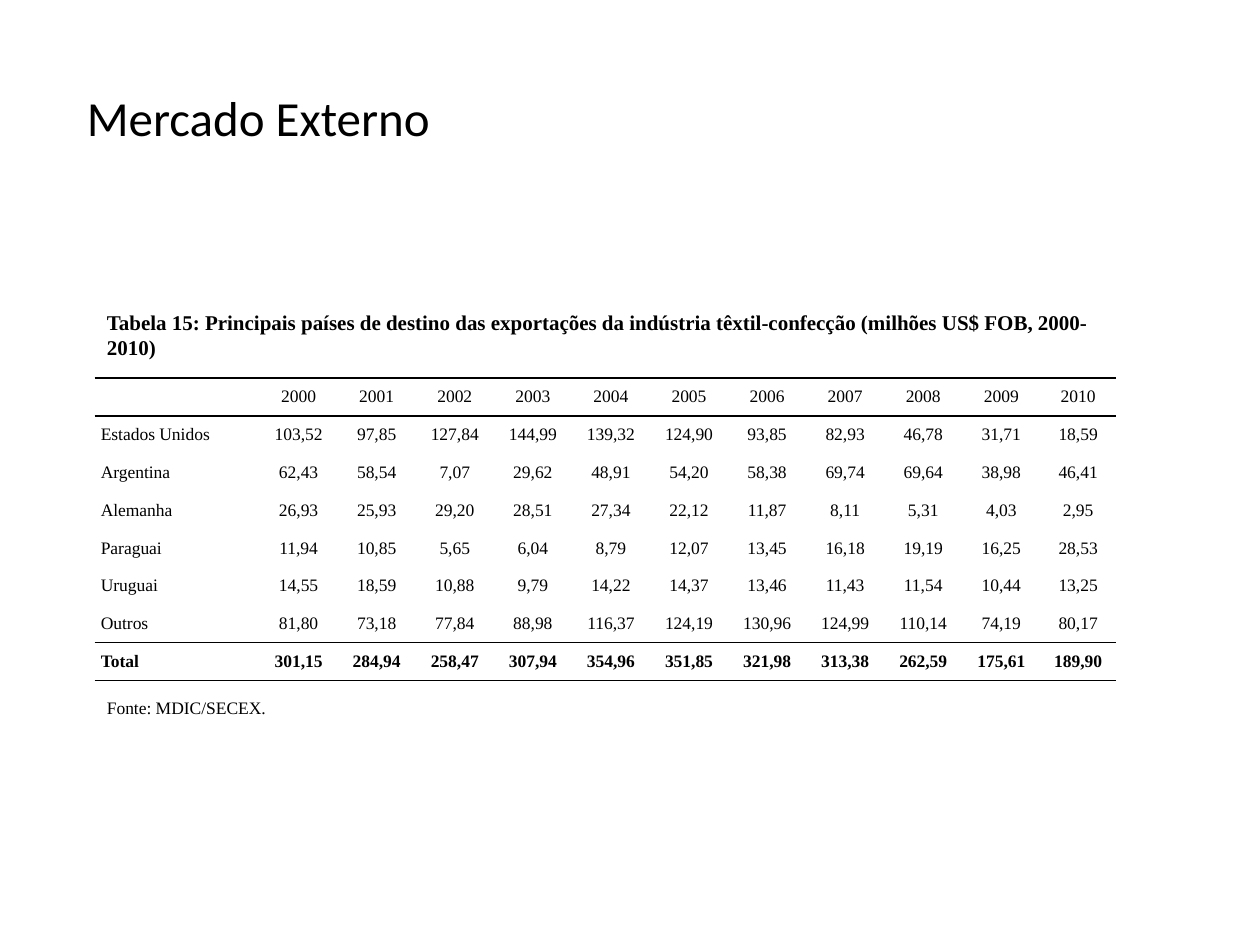
from lxml import etree
from pptx import Presentation
from pptx.dml.color import RGBColor
from pptx.enum.text import MSO_ANCHOR, PP_ALIGN
from pptx.oxml.ns import qn
from pptx.util import Inches, Pt

MIDDLE, TOP = MSO_ANCHOR.MIDDLE, MSO_ANCHOR.TOP
LEFT, CENTER = PP_ALIGN.LEFT, PP_ALIGN.CENTER
BLACK = "000000"
SERIF = "Times New Roman"
RULE_ROWS = {0, 1, 7, 8}
COLUMN_WIDTHS = [1.31] + [0.62] * 10 + [0.6]
ROW_HEIGHT = 0.3
YEARS = [str(year) for year in range(2000, 2011)]
EXPORTS = [
    ("Estados Unidos", "103,52 97,85 127,84 144,99 139,32 124,90 93,85 82,93 46,78 31,71 18,59"),
    ("Argentina", "62,43 58,54 7,07 29,62 48,91 54,20 58,38 69,74 69,64 38,98 46,41"),
    ("Alemanha", "26,93 25,93 29,20 28,51 27,34 22,12 11,87 8,11 5,31 4,03 2,95"),
    ("Paraguai", "11,94 10,85 5,65 6,04 8,79 12,07 13,45 16,18 19,19 16,25 28,53"),
    ("Uruguai", "14,55 18,59 10,88 9,79 14,22 14,37 13,46 11,43 11,54 10,44 13,25"),
    ("Outros", "81,80 73,18 77,84 88,98 116,37 124,19 130,96 124,99 110,14 74,19 80,17"),
    ("Total", "301,15 284,94 258,47 307,94 354,96 351,85 321,98 313,38 262,59 175,61 189,90"),
]


def set_color(color_format, value):
    color_format.rgb = RGBColor.from_string(value)


def add_span(para, text, size, font=SERIF, bold=False):
    span = para.add_run()
    span.text = text
    span.font.size = Pt(size)
    span.font.name = font
    span.font.bold = bold
    span.font.fill.solid()
    set_color(span.font.fill.fore_color, BLACK)


def add_text(page, place, text, size, font=SERIF, bold=False, anchor=TOP, inset=0.1):
    box = page.shapes.add_textbox(*(Inches(length) for length in place))
    frame = box.text_frame
    frame.word_wrap = True
    frame.vertical_anchor = anchor
    frame.margin_left = Inches(inset)
    add_span(frame.paragraphs[0], text, size, font, bold)


def set_borders(cell, ruled_sides):
    properties = cell._tc.get_or_add_tcPr()
    for side in ("L", "R", "T", "B"):
        line = etree.SubElement(properties, qn(f"a:ln{side}"))
        if side in ruled_sides:
            line.set("w", str(Pt(1)))
            fill = etree.SubElement(line, qn("a:solidFill"))
            etree.SubElement(fill, qn("a:srgbClr")).set("val", BLACK)
        else:
            etree.SubElement(line, qn("a:noFill"))


def fill_cell(cell, text, row, column, bold):
    cell.vertical_anchor = MIDDLE
    cell.margin_left = cell.margin_right = Inches(0.05)
    cell.margin_top = cell.margin_bottom = 0
    para = cell.text_frame.paragraphs[0]
    para.alignment = CENTER if column else LEFT
    add_span(para, text, 10, bold=bold)
    set_borders(cell, [side for side, edge in (("T", row), ("B", row + 1)) if edge in RULE_ROWS])
    cell.fill.background()


def add_export_table(page, left, top):
    rows = [["", *YEARS]] + [[country, *values.split()] for country, values in EXPORTS]
    frame = page.shapes.add_table(
        len(rows), len(COLUMN_WIDTHS), Inches(left), Inches(top),
        Inches(sum(COLUMN_WIDTHS)), Inches(ROW_HEIGHT * len(rows)),
    )
    table = frame.table
    table.first_row = False
    table.horz_banding = False
    for column, width in zip(table.columns, COLUMN_WIDTHS):
        column.width = Inches(width)
    for row, texts in enumerate(rows):
        table.rows[row].height = Inches(ROW_HEIGHT)
        for column, text in enumerate(texts):
            fill_cell(table.cell(row, column), text, row, column, texts[0] == "Total")


def main():
    deck = Presentation()
    deck.slide_width, deck.slide_height = Inches(10), Inches(7.5)
    page = deck.slides.add_slide(deck.slide_layouts[6])
    add_text(page, (0.5, 0.3, 9, 1.25), "Mercado Externo", 28, "Calibri", anchor=MIDDLE, inset=0.19)
    add_text(page, (0.75, 5.48, 7.8, 0.27), "Fonte: MDIC/SECEX.", 10)
    add_text(
        page, (0.75, 2.41, 8.19, 0.5),
        "Tabela 15: Principais países de destino das exportações da indústria "
        "têxtil-confecção (milhões US$ FOB, 2000-2010)",
        12, bold=True,
    )
    add_export_table(page, 0.75, 3)
    deck.save("out.pptx")


if __name__ == "__main__":
    main()
